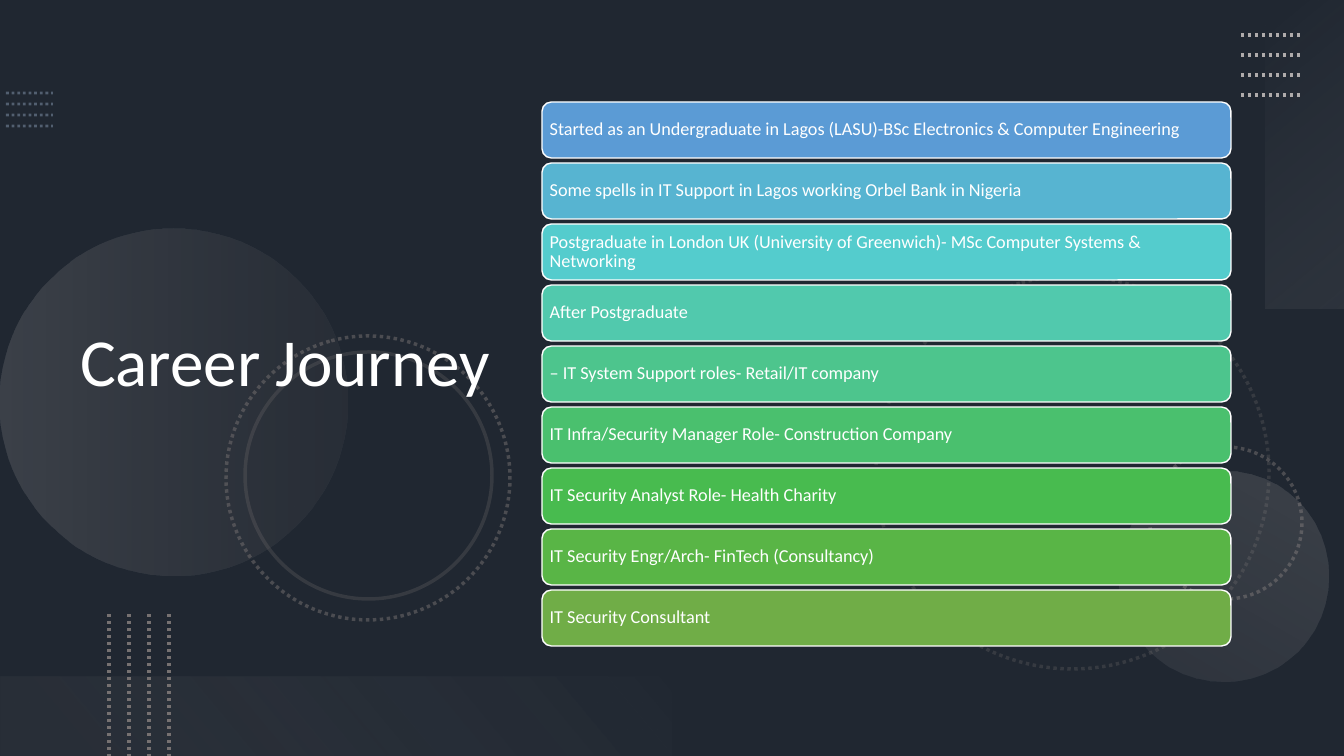
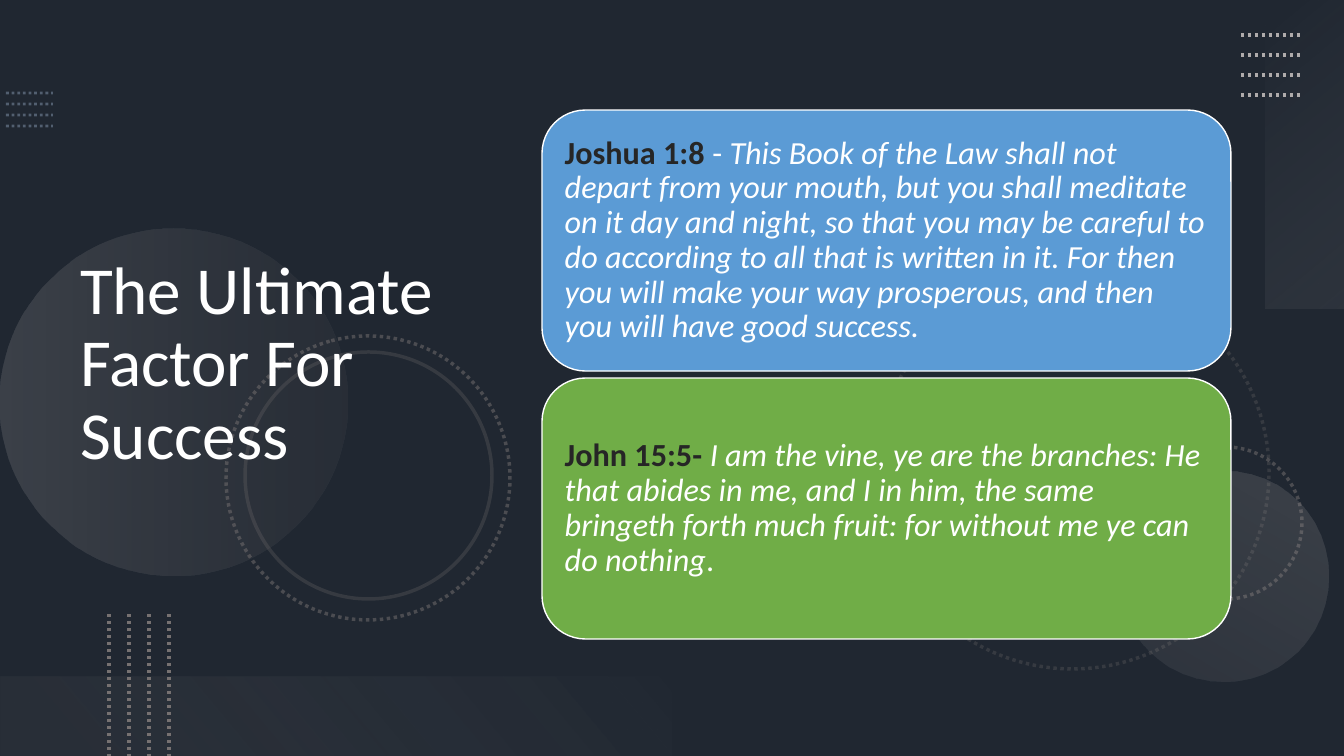
from lxml.etree import SubElement
from pptx import Presentation
from pptx.dml.color import RGBColor
from pptx.enum.dml import MSO_LINE
from pptx.enum.shapes import MSO_CONNECTOR, MSO_SHAPE
from pptx.enum.text import MSO_ANCHOR, PP_ALIGN
from pptx.oxml.ns import qn
from pptx.util import Emu, Pt

W, H = 1344, 756
SCALE = 12192000 / W
FONT = "Calibri"

C = {
    "base": "44546A", "shade": "000000", "white": "FFFFFF", "ink": "262626",
    "blue": "5B9BD5", "green": "70AD47", "steel": "8497B0",
    "grey": "767171", "silver": "AFABAB", "pale": "F5F5F5", "mist": "F1F0F0",
}

# Run styles: colour, bold, italic
PLAIN = ("white", False, False)
VERSE = ("white", False, True)
REF = ("ink", True, False)

CAREER = [
    ("Started as an Undergraduate in Lagos (LASU)-BSc Electronics & Computer Engineering", C["blue"]),
    ("Some spells in IT Support in Lagos working Orbel Bank in Nigeria", "57B4D1"),
    ("Postgraduate in London UK (University of Greenwich)- MSc Computer Systems & Networking", "54CCCD"),
    ("After Postgraduate", "51C9AD"),
    ("– IT System Support roles- Retail/IT company", "4DC58D"),
    ("IT Infra/Security Manager Role- Construction Company", "4AC06E"),
    ("IT Security Analyst Role- Health Charity", "48BB4F"),
    ("IT Security Engr/Arch- FinTech (Consultancy)", "59B546"),
    ("IT Security Consultant", C["green"]),
]

VERSES = [
    ([("Joshua 1:8 ", REF), ("- ", PLAIN),
      ("This Book of the Law shall not depart from your mouth, but you shall meditate on it "
       "day and night, so that you may be careful to do according to all that is written in it. "
       "For then you will make your way prosperous, and then you will have good success.", VERSE)],
     C["blue"]),
    ([("John 15:5- ", REF),
      ("I am the vine, ye are the branches: He that abides in me, and I in him, the same "
       "bringeth forth much fruit: for without me ye can do nothing", VERSE),
      (".", PLAIN)],
     C["green"]),
]

SLIDES = [
    {"title": "Career Journey",
     "cards": [([(text, PLAIN)], fill) for text, fill in CAREER],
     "top": 102, "height": 56, "pitch": 61, "inset": 5, "size": 13},
    {"title": "The Ultimate Factor For Success", "cards": VERSES,
     "top": 110, "height": 261, "pitch": 268, "inset": 10, "size": 23},
]
CARD_X, CARD_W = 542, 689
TITLE_BOX = (70, 54, 463, 622)

# Rings: left, top, diameter, dotted, opacity
BACK_RINGS = [(876, 276, 393, True, 25), (1150, 447, 152, True, 50)]
FRONT_RINGS = [(226, 336, 284, True, 50), (245, 352, 247, False, 25)]

# Gradients: shape, box, rotation, angle, stops of (position, colour, opacity)
DISCS = [
    (MSO_SHAPE.OVAL, (0, 229, 347, 347), 270, 90, [(0, "silver", 20), (1, "grey", 10)]),
    (MSO_SHAPE.OVAL, (1119, 471, 210, 210), 210, 90, [(0, "silver", 10), (1, "silver", 20)]),
]
BANDS = [
    (MSO_SHAPE.RECTANGLE, (1151, 115, 308, 79), 270, 140, [(0, "pale", 0), (1, "silver", 10)]),
    (MSO_SHAPE.RECTANGLE, (0, 677, 672, 79), 180, 140, [(0.1, "grey", 10), (1, "mist", 0)]),
]

# Dotted lines: first line's ends, step to the next, colour, width, opacity
DOT_ROWS = [
    ((6, 93, 53, 93), (0, 11), "steel", 2, 50),
    ((1241, 35, 1301, 35), (0, 20), "silver", 2.5, 100),
    ((109, 614, 109, 756), (20, 0), "grey", 2.5, 100),
]
LINES_PER_ROW = 4


def px(*values):
    return [Emu(round(v * SCALE)) for v in values]


def rgb(value):
    return RGBColor.from_string(value)


def set_opacity(sp, *percents):
    for clr, percent in zip(list(sp._element.spPr.iter(qn("a:srgbClr"))), percents):
        if percent < 100:
            SubElement(clr, qn("a:alpha")).set("val", str(percent * 1000))


def set_line(sp, color, width, dotted=False):
    sp.line.color.rgb = rgb(color)
    sp.line.width = Pt(width)
    if dotted:
        sp.line.dash_style = MSO_LINE.ROUND_DOT


def add_shape(s, kind, box, fill=None):
    sp = s.shapes.add_shape(kind, *px(*box))
    sp.shadow.inherit = False
    sp.line.fill.background()
    if fill:
        sp.fill.solid()
        sp.fill.fore_color.rgb = rgb(fill)
    else:
        sp.fill.background()
    return sp


def add_ring(s, x, y, size, dotted, opacity):
    sp = add_shape(s, MSO_SHAPE.OVAL, (x, y, size, size))
    sp.rotation = 75
    set_line(sp, C["grey"], 2.5, dotted)
    set_opacity(sp, opacity)


def add_gradient(s, kind, box, rotation, angle, stops):
    sp = add_shape(s, kind, box)
    sp.rotation = rotation
    sp.fill.gradient()
    sp.fill.gradient_angle = 360 - angle
    for stop, (position, color, _) in zip(sp.fill.gradient_stops, stops):
        stop.position = position
        stop.color.rgb = rgb(C[color])
    set_opacity(sp, *(opacity for _, _, opacity in stops))


def add_dot_row(s, ends, step, color, width, opacity):
    x1, y1, x2, y2 = ends
    for i in range(LINES_PER_ROW):
        dx, dy = step[0] * i, step[1] * i
        line = s.shapes.add_connector(
            MSO_CONNECTOR.STRAIGHT, *px(x1 + dx, y1 + dy, x2 + dx, y2 + dy))
        set_line(line, C[color], width, True)
        set_opacity(line, opacity)
        SubElement(line._element.spPr, qn("a:effectLst"))


def write(sp, runs, size, inset):
    tf = sp.text_frame
    tf.word_wrap = True
    tf.vertical_anchor = MSO_ANCHOR.MIDDLE
    tf.margin_left, tf.margin_top, tf.margin_right, tf.margin_bottom = px(*[inset] * 4)
    p = tf.paragraphs[0]
    p.alignment = PP_ALIGN.LEFT
    p.line_spacing = 0.9
    for text, (color, bold, italic) in runs:
        r = p.add_run()
        r.text = text
        r.font.name, r.font.size = FONT, Pt(size)
        r.font.bold, r.font.italic = bold, italic
        r.font.color.rgb = rgb(C[color])


def add_backdrop(s):
    s.background.fill.solid()
    s.background.fill.fore_color.rgb = rgb(C["base"])
    set_opacity(add_shape(s, MSO_SHAPE.RECTANGLE, (0, 0, W, H), C["shade"]), 53)
    for ring in BACK_RINGS:
        add_ring(s, *ring)
    for disc in DISCS:
        add_gradient(s, *disc)
    for ring in FRONT_RINGS:
        add_ring(s, *ring)
    for band in BANDS:
        add_gradient(s, *band)
    for row in DOT_ROWS:
        add_dot_row(s, *row)


def add_cards(s, data):
    for i, (runs, fill) in enumerate(data["cards"]):
        box = (CARD_X, data["top"] + i * data["pitch"], CARD_W, data["height"])
        sp = add_shape(s, MSO_SHAPE.ROUNDED_RECTANGLE, box, fill)
        set_line(sp, C["white"], 1)
        write(sp, runs, data["size"], data["inset"])


def main():
    prs = Presentation()
    prs.slide_width, prs.slide_height = px(W, H)
    for data in SLIDES:
        s = prs.slides.add_slide(prs.slide_layouts[6])
        add_backdrop(s)
        title = s.shapes.add_textbox(*px(*TITLE_BOX))
        write(title, [(data["title"], PLAIN)], 48, 10)
        add_cards(s, data)
    prs.save("out.pptx")


if __name__ == "__main__":
    main()
